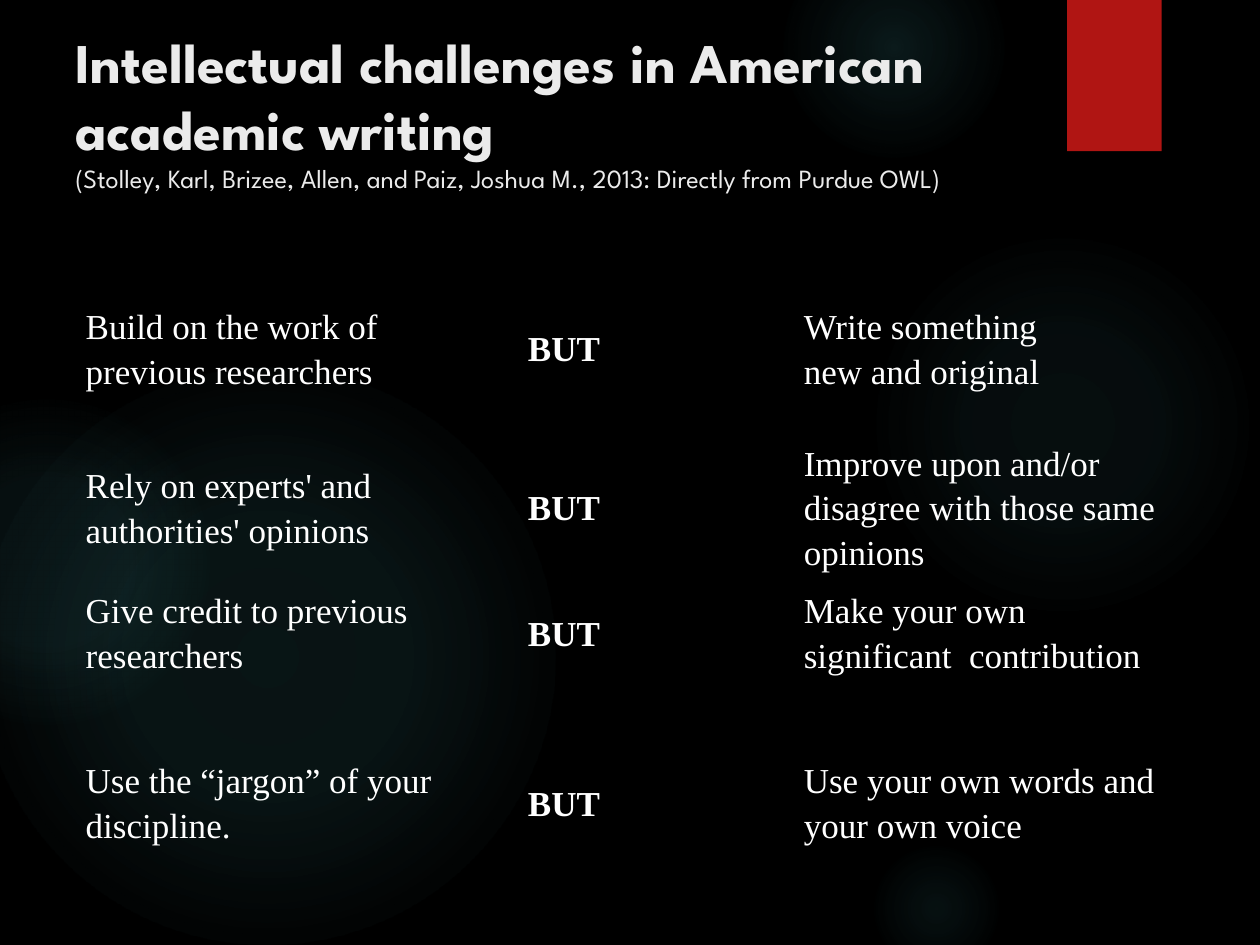
from typing import NamedTuple

from lxml.etree import SubElement
from pptx import Presentation
from pptx.dml.color import RGBColor
from pptx.enum.shapes import MSO_SHAPE as Preset
from pptx.enum.text import MSO_ANCHOR as Anchor
from pptx.oxml import parse_xml
from pptx.oxml.ns import nsdecls, qn
from pptx.util import Inches, Pt

BLACK = RGBColor(0x00, 0x00, 0x00)
WHITE = RGBColor(0xFF, 0xFF, 0xFF)
PALE = RGBColor(0xEB, 0xEB, 0xEB)
RED = RGBColor(0xB0, 0x15, 0x13)
TEAL = RGBColor(0x50, 0xB9, 0xC1)
HEADING_FONT = "League Spartan"
BODY_FONT = "Times New Roman"
PLAIN_TABLE_STYLE = "{2D5ABB26-0587-4C30-8999-92F81FD0307C}"


class Glow(NamedTuple):
    left: float
    top: float
    diameter: float
    centre_alpha: int
    middle_alpha: int
    edge: int  # percent of the radius where the glow ends


class Challenge(NamedTuple):
    convention: str
    demand: str
    height: float


GLOWS = [
    Glow(6.89, 1.83, 3.08, 7, 6, 69),
    Glow(6.22, -0.5, 1.75, 14, 7, 73),
    Glow(6.89, 6.67, 1.08, 9, 5, 66),
    Glow(-0.17, 2.92, 4.58, 11, 10, 75),
    Glow(-0.92, 3.17, 2.58, 8, 8, 72),
]
CHALLENGES = [
    Challenge("Build on the work of previous researchers",
              "Write something\vnew and original", 1.35),
    Challenge("Rely on experts' and authorities' opinions",
              "Improve upon and/or disagree with those same opinions", 1.08),
    Challenge("Give credit to previous researchers",
              "Make your own significant  contribution", 0.82),
    Challenge("Use the “jargon” of your discipline.",
              "Use your own words and your own voice", 1.88),
]
COLUMN_WIDTHS = [2.89, 2.81, 2.81]
CELL_MARGIN = 0.01
BUT_INDENT = 0.63


def write(paragraph, text: str, *, size: float, font: str, color: RGBColor,
          bold: bool = False, line_spacing: float = 1.0) -> None:
    paragraph.text = text
    paragraph.line_spacing = line_spacing
    paragraph.font.size = Pt(size)
    paragraph.font.name = font
    paragraph.font.color.rgb = color
    paragraph.font.bold = bold


def add_plain_shape(slide, preset: Preset, left: float, top: float,
                    width: float, height: float):
    shape = slide.shapes.add_shape(preset, Inches(left), Inches(top),
                                   Inches(width), Inches(height))
    shape.shadow.inherit = False
    shape.line.fill.background()
    return shape


def add_glow(slide, glow: Glow) -> None:
    """Draw a circle that fades radially to full transparency."""
    shape = add_plain_shape(slide, Preset.OVAL, glow.left, glow.top,
                            glow.diameter, glow.diameter)
    stops = [(0, glow.centre_alpha), (36, glow.middle_alpha), (glow.edge, 0)]
    stop_xml = "".join(
        f'<a:gs pos="{position * 1000}"><a:srgbClr val="{TEAL}">'
        f'<a:alpha val="{alpha * 1000}"/></a:srgbClr></a:gs>'
        for position, alpha in stops)
    gradient = parse_xml(
        f'<a:gradFill {nsdecls("a")}><a:gsLst>{stop_xml}</a:gsLst>'
        '<a:path path="circle"><a:fillToRect l="50000" t="50000" r="50000" '
        'b="50000"/></a:path></a:gradFill>')
    shape._element.spPr.find(qn("a:prstGeom")).addnext(gradient)


def add_ribbon(slide) -> None:
    shape = add_plain_shape(slide, Preset.RECTANGLE, 8.47, 0, 0.75, 1.2)
    shape.fill.solid()
    shape.fill.fore_color.rgb = RED
    effects = shape._element.spPr.find(qn("a:effectLst"))
    shadow = SubElement(effects, qn("a:outerShdw"), blurRad=str(Pt(3)),
                        dist=str(Pt(2)), dir="5400000", rotWithShape="0")
    color = SubElement(shadow, qn("a:srgbClr"), val=str(BLACK))
    SubElement(color, qn("a:alpha"), val="45000")


def add_title(slide) -> None:
    box = slide.shapes.add_textbox(Inches(0.5), Inches(0.17),
                                   Inches(7.72), Inches(1.53))
    frame = box.text_frame
    frame.word_wrap = True
    frame.vertical_anchor = Anchor.TOP
    write(frame.paragraphs[0],
          "Intellectual challenges in American academic writing",
          size=32, font=HEADING_FONT, color=PALE, bold=True)
    write(frame.add_paragraph(),
          "(Stolley, Karl, Brizee, Allen, and Paiz, Joshua M., 2013: "
          "Directly from Purdue OWL)",
          size=15, font=HEADING_FONT, color=PALE)


def fill_cell(cell, text: str, *, bold: bool = False,
              indent: float = CELL_MARGIN) -> None:
    cell.fill.background()
    cell.vertical_anchor = Anchor.MIDDLE
    cell.margin_left = Inches(indent)
    cell.margin_right = cell.margin_top = cell.margin_bottom = Inches(CELL_MARGIN)
    paragraph = cell.text_frame.paragraphs[0]
    write(paragraph, text, size=20, font=BODY_FONT, color=WHITE, bold=bold,
          line_spacing=1.15)
    paragraph.space_after = Pt(10)


def add_challenge_table(slide) -> None:
    height = sum(challenge.height for challenge in CHALLENGES)
    frame = slide.shapes.add_table(
        len(CHALLENGES), len(COLUMN_WIDTHS), Inches(0.67), Inches(2.08),
        Inches(sum(COLUMN_WIDTHS)), Inches(height))
    table = frame.table
    table.first_row = table.horz_banding = False
    table._tbl.tblPr.find(qn("a:tableStyleId")).text = PLAIN_TABLE_STYLE
    for column, width in zip(table.columns, COLUMN_WIDTHS):
        column.width = Inches(width)
    for row, challenge in zip(table.rows, CHALLENGES):
        row.height = Inches(challenge.height)
        convention, conjunction, demand = row.cells
        fill_cell(convention, challenge.convention)
        fill_cell(conjunction, "BUT", bold=True, indent=BUT_INDENT)
        fill_cell(demand, challenge.demand)


def main() -> None:
    presentation = Presentation()
    presentation.slide_width = Inches(10)
    presentation.slide_height = Inches(7.5)
    slide = presentation.slides.add_slide(presentation.slide_layouts[6])
    slide.background.fill.solid()
    slide.background.fill.fore_color.rgb = BLACK
    for glow in GLOWS:
        add_glow(slide, glow)
    add_ribbon(slide)
    add_title(slide)
    add_challenge_table(slide)
    presentation.save("out.pptx")


if __name__ == "__main__":
    main()
